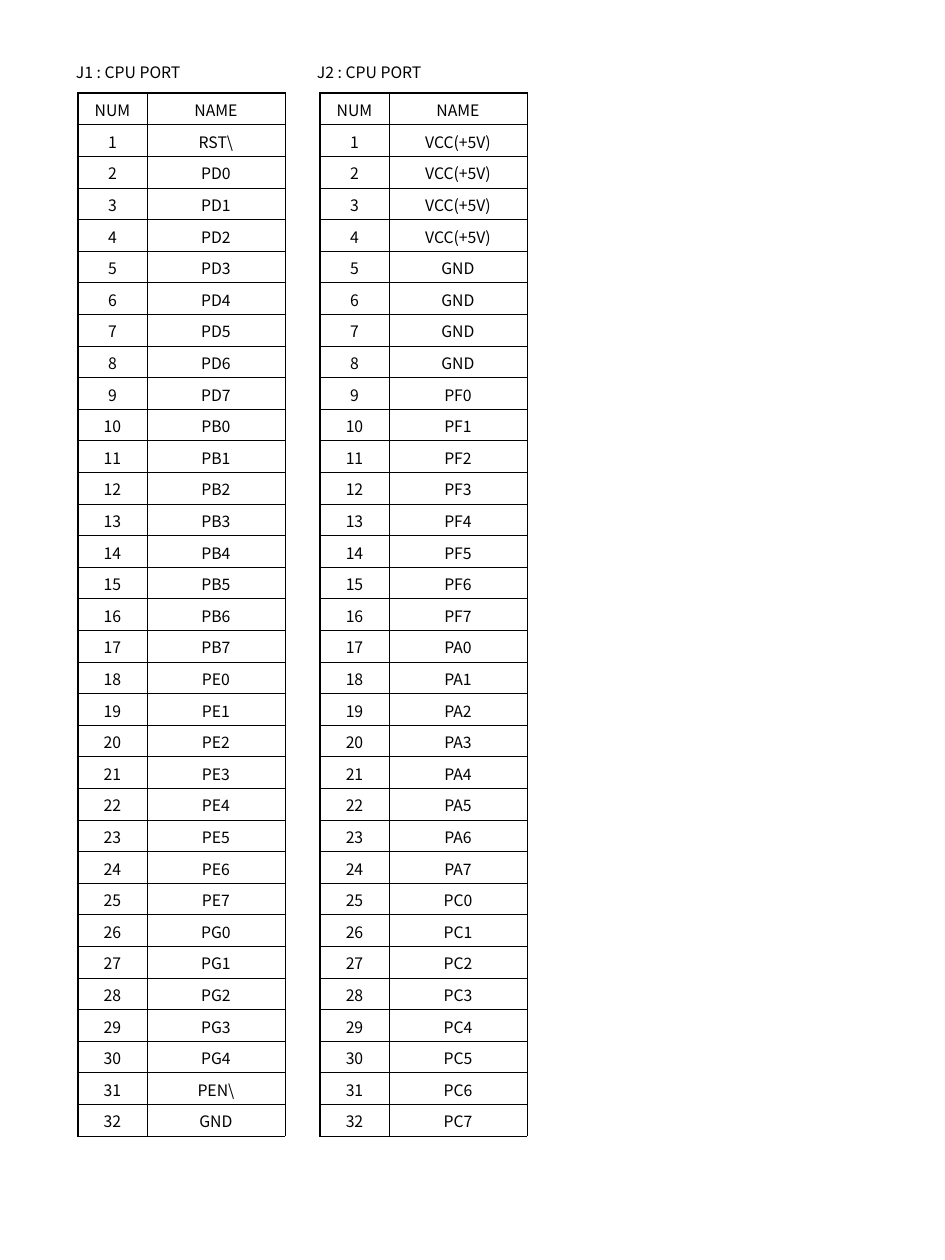
import pptx
import pptx.dml.color
import pptx.enum.text
import pptx.oxml
import pptx.util

SCALE = 914400 // 126  # EMU per px
THEME = {
    "font": "Noto Sans CJK KR",
    "size": pptx.util.Pt(9),
    "ink": "000000",
    "thin": pptx.util.Pt(0.25),
    "thick": pptx.util.Pt(1),
}
TITLE_TOP, TITLE_WIDTH, TITLE_HEIGHT = 59, 246, 31
TABLE_TOP, TABLE_HEIGHT = 93, 1043
COLUMN_WIDTHS = [69, 138]
TITLE_MARGINS = {"margin_left": 12, "margin_right": 12, "margin_top": 4, "margin_bottom": 4}
CELL_MARGINS = {"margin_left": 4, "margin_right": 4, "margin_top": 5, "margin_bottom": 3}


def port_pins(letter, count=8):
    return [f"P{letter}{bit}" for bit in range(count)]


def write(frame, text, alignment):
    paragraph = frame.paragraphs[0]
    paragraph.alignment = alignment
    run = paragraph.add_run()
    run.text = text
    for name in ("name", "size"):
        setattr(run.font, name, THEME["font" if name == "name" else name])
    run.font.color.rgb = pptx.dml.color.RGBColor.from_string(THEME["ink"])


connectors = [
    {
        "title": "J1 : CPU PORT", "title_left": 64, "table_left": 78,
        "pins": ["RST\\", *port_pins("D"), *port_pins("B"), *port_pins("E"),
                 *port_pins("G", 5), "PEN\\", "GND"],
    },
    {
        "title": "J2 : CPU PORT", "title_left": 305, "table_left": 320,
        "pins": ["VCC(+5V)"] * 4 + ["GND"] * 4 + port_pins("F") + port_pins("A")
                + port_pins("C"),
    },
]

deck = pptx.Presentation()
deck.slide_width, deck.slide_height = 945 * SCALE, 1260 * SCALE
slide = deck.slides.add_slide(deck.slide_layouts[6])

for connector in connectors:
    title = slide.shapes.add_textbox(
        connector["title_left"] * SCALE, TITLE_TOP * SCALE,
        TITLE_WIDTH * SCALE, TITLE_HEIGHT * SCALE).text_frame
    title.word_wrap = True
    title.auto_size = pptx.enum.text.MSO_AUTO_SIZE.SHAPE_TO_FIT_TEXT
    for margin, length in TITLE_MARGINS.items():
        setattr(title, margin, length * SCALE)
    write(title, connector["title"], pptx.enum.text.PP_ALIGN.LEFT)

    rows = [("NUM", "NAME")]
    rows += [(str(number), pin) for number, pin in enumerate(connector["pins"], 1)]
    pin_table = slide.shapes.add_table(
        len(rows), len(COLUMN_WIDTHS), connector["table_left"] * SCALE,
        TABLE_TOP * SCALE, sum(COLUMN_WIDTHS) * SCALE, TABLE_HEIGHT * SCALE).table
    pin_table.first_row = pin_table.horz_banding = False
    for column, width in zip(pin_table.columns, COLUMN_WIDTHS):
        column.width = width * SCALE

    for row_index, row in enumerate(rows):
        pin_table.rows[row_index].height = TABLE_HEIGHT * SCALE // len(rows)
        for column_index, text in enumerate(row):
            cell = pin_table.cell(row_index, column_index)
            cell.vertical_anchor = pptx.enum.text.MSO_ANCHOR.MIDDLE
            for margin, length in CELL_MARGINS.items():
                setattr(cell, margin, length * SCALE)
            write(cell.text_frame, text, pptx.enum.text.PP_ALIGN.CENTER)
            borders = {
                "lnL": THEME["thin" if column_index else "thick"],
                "lnR": THEME["thin"],
                "lnT": THEME["thin" if row_index else "thick"],
                "lnB": THEME["thin"],
            }
            for side, width in borders.items():
                cell._tc.get_or_add_tcPr().append(pptx.oxml.parse_xml(
                    f'<a:{side} xmlns:a="http://schemas.openxmlformats.org/drawingml/2006/main"'
                    f' w="{width}"><a:solidFill><a:srgbClr val="{THEME["ink"]}"/>'
                    f'</a:solidFill></a:{side}>'))
            cell.fill.background()

deck.save("out.pptx")
